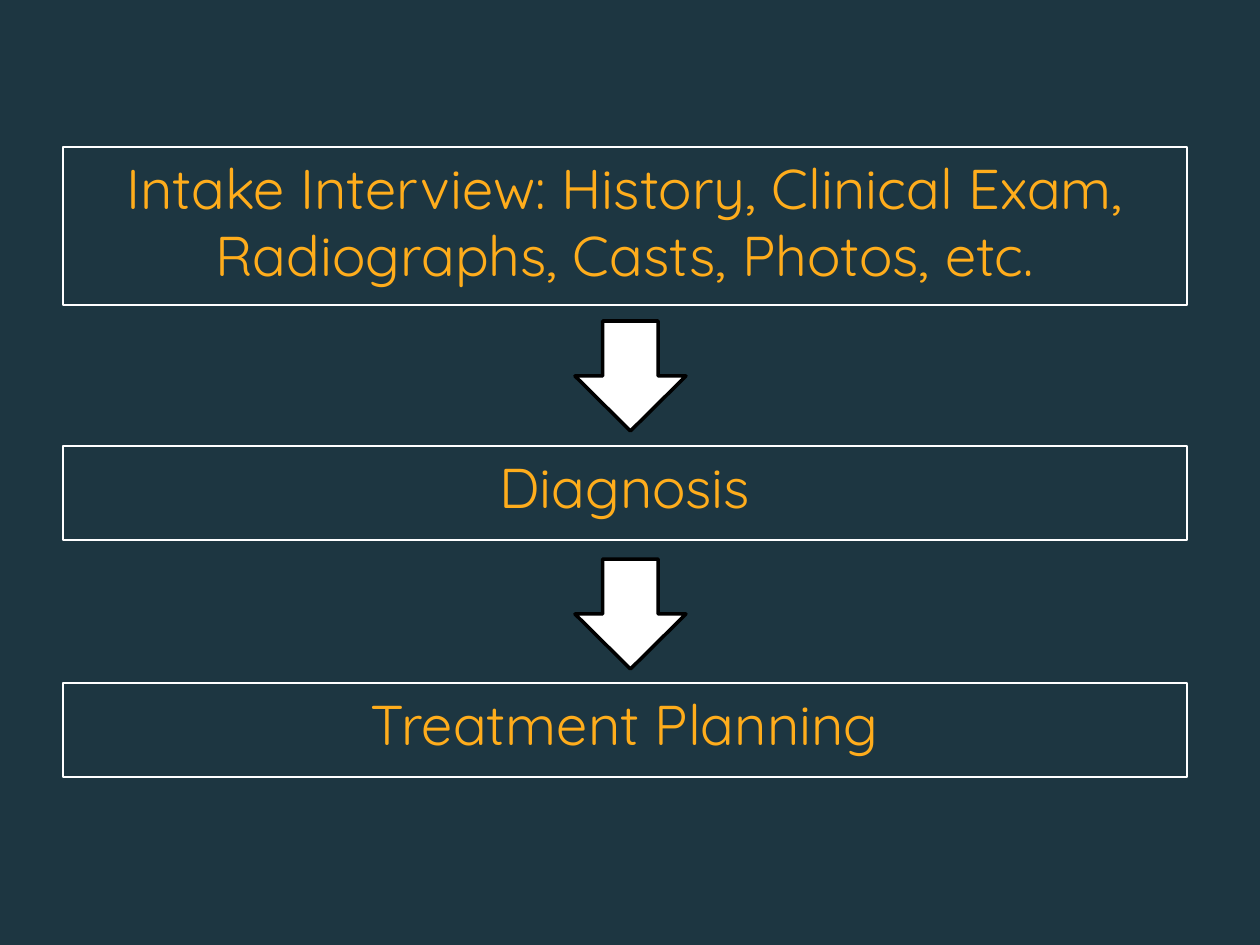
from pptx import Presentation
from pptx.dml.color import RGBColor
from pptx.enum.shapes import MSO_SHAPE
from pptx.enum.text import MSO_ANCHOR, PP_ALIGN
from pptx.util import Pt

PX = 7257  # EMU per px, 126 px to the inch


def rgb(code):
    return RGBColor.from_string(code)


class Deck:
    font = "Quicksand"
    size = 32
    back = "1D3641"
    gold = "FFAD1C"
    white = "FFFFFF"
    black = "000000"

    def __init__(self, show):
        self.slide = show.slides.add_slide(show.slide_layouts[6])
        fill = self.slide.background.fill
        fill.solid()
        fill.fore_color.rgb = rgb(self.back)

    def shape(self, kind, x, y, w, h, line, width):
        item = self.slide.shapes.add_shape(kind, x * PX, y * PX, w * PX, h * PX)
        item.shadow.inherit = False
        item.line.color.rgb = rgb(line)
        item.line.width = Pt(width)
        return item

    def box(self, text, x, y, w, h):
        item = self.shape(MSO_SHAPE.RECTANGLE, x, y, w, h, self.white, 0.75)
        item.fill.background()
        frame = item.text_frame
        frame.word_wrap = True
        frame.vertical_anchor = MSO_ANCHOR.TOP
        frame.text = text
        para = frame.paragraphs[0]
        para.alignment = PP_ALIGN.CENTER
        font = para.runs[0].font
        font.name = self.font
        font.size = Pt(self.size)
        font.color.rgb = rgb(self.gold)

    def arrow(self, x, y, w, h):
        item = self.shape(MSO_SHAPE.DOWN_ARROW, x, y, w, h, self.black, 2)
        item.fill.solid()
        item.fill.fore_color.rgb = rgb(self.white)


def main():
    show = Presentation()
    show.slide_width = 1260 * PX
    show.slide_height = 945 * PX
    deck = Deck(show)

    # Steps of the process
    steps = [
        ("Intake Interview: History, Clinical Exam, "
         "Radiographs, Casts, Photos, etc.", 147, 158),
        ("Diagnosis", 446, 94),
        ("Treatment Planning", 683, 94),
    ]
    for text, top, high in steps:
        deck.box(text, 63, top, 1124, high)

    # Arrows between the steps
    for top in (321, 559):
        deck.arrow(575, top, 111, 110)

    show.save("out.pptx")


if __name__ == "__main__":
    main()
